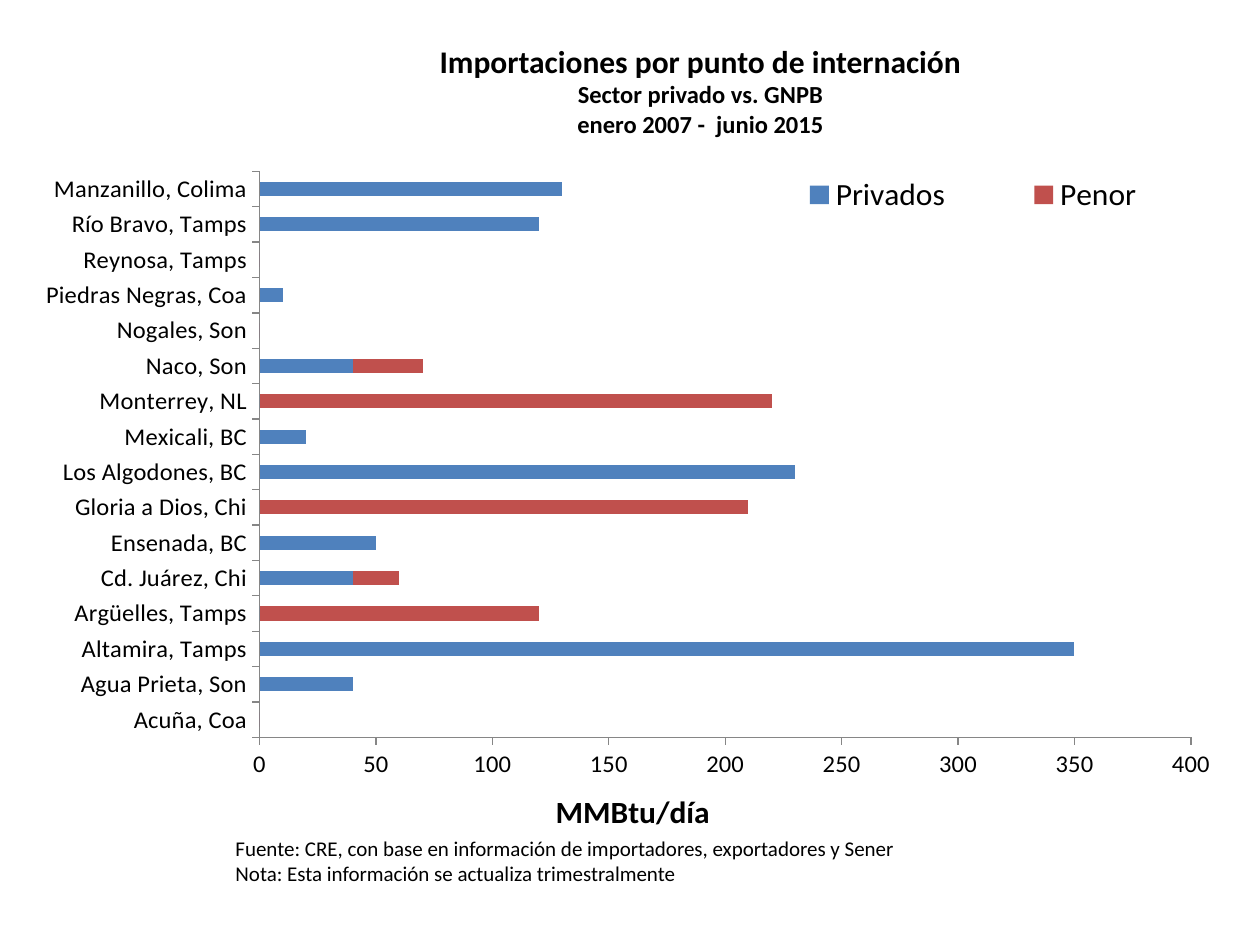
from lxml import etree
from pptx import Presentation
from pptx.chart.data import CategoryChartData
from pptx.dml.color import RGBColor
from pptx.enum.chart import XL_CHART_TYPE, XL_LEGEND_POSITION, XL_TICK_MARK
from pptx.enum.text import MSO_ANCHOR, MSO_AUTO_SIZE, PP_ALIGN
from pptx.oxml.ns import qn
from pptx.util import Inches, Pt

BLACK = RGBColor(0x00, 0x00, 0x00)
GREY = RGBColor(0x86, 0x86, 0x86)
BLUE = RGBColor(0x4F, 0x81, 0xBD)
RED = RGBColor(0xC0, 0x50, 0x4D)
FONT = "Calibri"


def write_lines(frame, lines, align):
    frame.word_wrap = True
    frame.auto_size = MSO_AUTO_SIZE.NONE
    frame.vertical_anchor = MSO_ANCHOR.TOP
    for index, (words, size, bold) in enumerate(lines):
        paragraph = frame.add_paragraph() if index else frame.paragraphs[0]
        paragraph.alignment = align
        run = paragraph.add_run()
        run.text = words
        run.font.name = FONT
        run.font.size = Pt(size)
        run.font.bold = bold
        run.font.color.rgb = BLACK


def place(part, position, target=None, **shares):
    for former in part.findall(qn("c:layout")):
        part.remove(former)
    layout = etree.Element(qn("c:layout"))
    part.insert(position, layout)
    manual = etree.SubElement(layout, qn("c:manualLayout"))
    if target:
        etree.SubElement(manual, qn("c:layoutTarget")).set("val", target)
    for side in ("x", "y"):
        etree.SubElement(manual, qn(f"c:{side}Mode")).set("val", "edge")
    for name, share in shares.items():
        etree.SubElement(manual, qn(f"c:{name}")).set("val", str(share))


prs = Presentation()
prs.slide_width, prs.slide_height = Inches(10), Inches(7.5)
slide = prs.slides.add_slide(prs.slide_layouts[5])

heading = slide.shapes.title
heading.left, heading.top = Inches(2.03), Inches(0.28)
heading.width, heading.height = Inches(7.06), Inches(0.88)
write_lines(heading.text_frame, [
    ("Importaciones por punto de internación", 18, True),
    ("Sector privado vs. GNPB", 14, True),
    ("enero 2007 -  junio 2015", 14, True),
], PP_ALIGN.CENTER)

source_note = slide.shapes.add_textbox(Inches(1.77), Inches(6.58), Inches(7.82), Inches(0.8))
write_lines(source_note.text_frame, [
    ("Fuente: CRE, con base en información de importadores, exportadores y Sener", 12, False),
    ("Nota: Esta información se actualiza trimestralmente", 12, False),
], PP_ALIGN.LEFT)

imports = [
    ("Acuña, Coa", 0, 0),
    ("Agua Prieta, Son", 40, 0),
    ("Altamira, Tamps", 350, 0),
    ("Argüelles, Tamps", 0, 120),
    ("Cd. Juárez, Chi", 40, 20),
    ("Ensenada, BC", 50, 0),
    ("Gloria a Dios, Chi", None, 210),
    ("Los Algodones, BC", 230, 0),
    ("Mexicali, BC", 20, 0),
    ("Monterrey, NL", 0, 220),
    ("Naco, Son", 40, 30),
    ("Nogales, Son", 0, 0),
    ("Piedras Negras, Coa", 10, 0),
    ("Reynosa, Tamps", 0, 0),
    ("Río Bravo, Tamps", 120, 0),
    ("Manzanillo, Colima", 130, 0),
]
entry_points, private, state = zip(*imports)
import_data = CategoryChartData()
import_data.categories = entry_points
import_data.add_series("Privados", private)
import_data.add_series("Penor", state)

chart = slide.shapes.add_chart(
    XL_CHART_TYPE.BAR_STACKED, Inches(0.14), Inches(1.2), Inches(9.6), Inches(5.47), import_data
).chart
chart.has_title = False
chart.font.name = FONT
chart.font.size = Pt(18)
chart.font.color.rgb = BLACK

bars = chart.plots[0]
bars.gap_width = 150
bars.overlap = 100
bars.vary_by_categories = False
for sector, color in zip(bars.series, (BLUE, RED)):
    sector.format.fill.solid()
    sector.format.fill.fore_color.rgb = color
    sector.invert_if_negative = False

for axis in (chart.category_axis, chart.value_axis):
    axis.has_major_gridlines = False
    axis.major_tick_mark = XL_TICK_MARK.OUTSIDE
    axis.minor_tick_mark = XL_TICK_MARK.NONE
    axis.tick_labels.font.size = Pt(14)
    axis.format.line.color.rgb = GREY
    axis.format.line.width = Pt(0.75)

daily_volume = chart.value_axis
daily_volume.minimum_scale, daily_volume.maximum_scale = 0, 400
daily_volume.major_unit = 50
unit = daily_volume.axis_title.text_frame.paragraphs[0].add_run()
unit.text = "MMBtu/día"
unit.font.name = FONT
unit.font.size = Pt(18)
unit.font.bold = True
unit.font.color.rgb = BLACK

chart.has_legend = True
legend = chart.legend
legend.position = XL_LEGEND_POSITION.RIGHT
legend.include_in_layout = True
legend.font.size = Pt(18)

place(bars._element.getparent(), 0, "inner", x=0.2, y=0.03, w=0.77, h=0.84)
place(daily_volume.axis_title._element, 1, x=0.44, y=0.94)
place(legend._element, 1, x=0.59, y=0.03, w=0.4, h=0.07)

prs.save("out.pptx")
